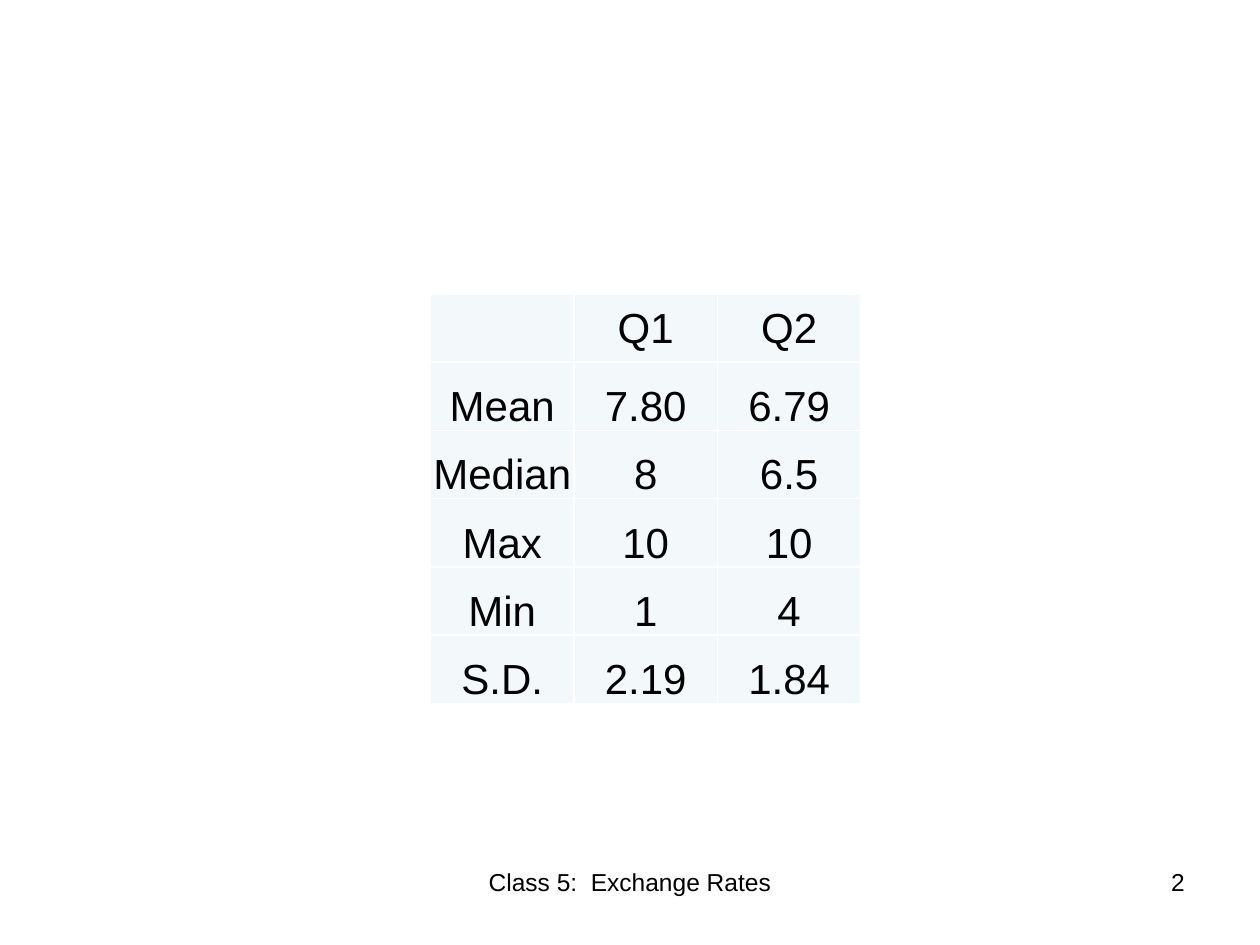
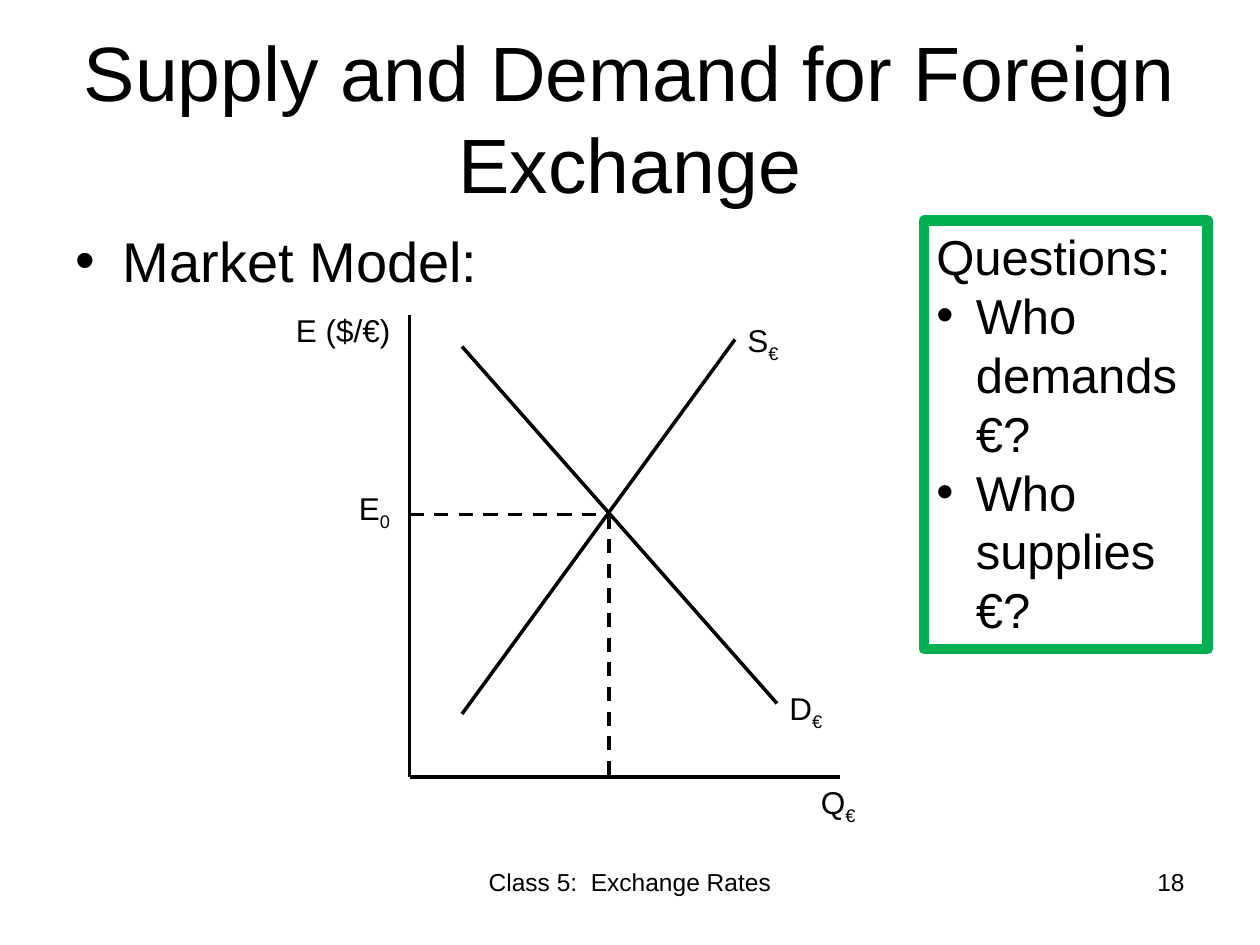
from lxml.etree import SubElement
from pptx import Presentation
from pptx.dml.color import RGBColor
from pptx.enum.dml import MSO_LINE_DASH_STYLE as Dash
from pptx.enum.shapes import MSO_CONNECTOR as Connector, MSO_SHAPE as Shape
from pptx.enum.text import MSO_ANCHOR as Anchor, MSO_AUTO_SIZE as AutoSize, PP_ALIGN as Align
from pptx.oxml.ns import qn
from pptx.util import Pt

# Shared look
BLACK = RGBColor(0x00, 0x00, 0x00)
WHITE = RGBColor(0xFF, 0xFF, 0xFF)
PALE = RGBColor(0xF3, 0xF9, 0xFA)
GREEN = RGBColor(0x00, 0xB0, 0x50)
FONT = "Arial"
FOOTER = "Class 5:  Exchange Rates"
BLANK_LAYOUT, CONTENT_LAYOUT = 6, 1

# Statistics table
STATISTICS = [
    ("", "Q1", "Q2"),
    ("Mean", "7.80", "6.79"),
    ("Median", "8", "6.5"),
    ("Max", "10", "10"),
    ("Min", "1", "4"),
    ("S.D.", "2.19", "1.84"),
]

# Market diagram, in points from its top left corner: start, end, dash
MARKET_LINES = [
    ((72, 270), (318, 270), None),
    ((72, 270), (72, 6), None),
    ((282, 228), (102, 24), None),
    ((102, 234), (258, 20), None),
    ((72, 120), (186, 120), Dash.DASH),
    ((186, 120), (186, 270), Dash.DASH),
]
# Left, top, width, text, subscript
MARKET_LABELS = [
    (0, 0, 96, "E ($/€)", ""),
    (258, 6, 54, "S", "€"),
    (282, 216, 54, "D", "€"),
    (300, 270, 54, "Q", "€"),
    (36, 102, 54, "E", "0"),
]


def set_all(target, values):
    for name, value in values.items():
        setattr(target, name, value)


def place(shape, box):
    set_all(shape, dict(zip(("left", "top", "width", "height"), map(Pt, box))))


def add_span(para, text, size, subscript=False):
    span = para.add_run()
    span.text = text
    set_all(span.font, {"name": FONT, "size": Pt(size)})
    span.font.color.rgb = BLACK
    if subscript:
        span.font._element.set("baseline", "-25000")


def add_bullet(para, indent):
    props = para._p.get_or_add_pPr()
    props.set("marL", str(Pt(indent)))
    props.set("indent", str(-Pt(indent)))
    SubElement(props, qn("a:buFont"), typeface=FONT)
    SubElement(props, qn("a:buChar"), char="•")


def add_label(page, box, text, size, align=Align.LEFT, subscript=""):
    frame = page.shapes.add_textbox(*map(Pt, box)).text_frame
    frame.word_wrap = True
    para = frame.paragraphs[0]
    para.alignment = align
    add_span(para, text, size)
    if subscript:
        add_span(para, subscript, size, subscript=True)


def add_footer(page, number):
    top, height = 492, 37.5
    add_label(page, (246, top, 228, height), FOOTER, 14, Align.CENTER)
    add_label(page, (516, top, 168, height), str(number), 14, Align.RIGHT)


def fill_placeholder(holder, box, text, size, anchor):
    """Move a title or body placeholder and return its paragraph."""
    place(holder, box)
    set_all(holder.text_frame, {"auto_size": AutoSize.NONE, "vertical_anchor": anchor,
                                "word_wrap": True})
    para = holder.text_frame.paragraphs[0]
    add_span(para, text, size)
    return para


def add_cell_borders(cell):
    props = cell._tc.get_or_add_tcPr()
    for side in ("lnL", "lnR", "lnT", "lnB"):
        line = SubElement(props, qn(f"a:{side}"), w=str(Pt(1)))
        fill = SubElement(line, qn("a:solidFill"))
        SubElement(fill, qn("a:srgbClr"), val=str(WHITE))


def add_statistics(page, box):
    table = page.shapes.add_table(len(STATISTICS), len(STATISTICS[0]), *map(Pt, box)).table
    set_all(table, {"first_row": False, "horz_banding": False})
    for row_index, values in enumerate(STATISTICS):
        for column_index, value in enumerate(values):
            cell = table.cell(row_index, column_index)
            set_all(cell, {
                "margin_left": Pt(0.75), "margin_right": Pt(0.75),
                "margin_top": Pt(0.75), "margin_bottom": 0,
                "vertical_anchor": Anchor.BOTTOM if row_index else Anchor.MIDDLE,
            })
            add_cell_borders(cell)
            cell.fill.solid()
            cell.fill.fore_color.rgb = PALE
            para = cell.text_frame.paragraphs[0]
            para.alignment = Align.CENTER
            if value:
                add_span(para, value, 24)


def add_market(page, left, top):
    for (x1, y1), (x2, y2), dash in MARKET_LINES:
        ends = map(Pt, (left + x1, top + y1, left + x2, top + y2))
        connector = page.shapes.add_connector(Connector.STRAIGHT, *ends)
        connector.line.color.rgb = BLACK
        set_all(connector.line, {"width": Pt(2), "dash_style": dash})
        SubElement(connector._element.spPr, qn("a:effectLst"))
    for x, y, width, text, subscript in MARKET_LABELS:
        add_label(page, (left + x, top + y, width, 28.8), text, 18, subscript=subscript)


def add_questions(page, box):
    panel = page.shapes.add_shape(Shape.RECTANGLE, *map(Pt, box))
    panel.shadow.inherit = False
    panel.fill.background()
    panel.line.color.rgb = GREEN
    panel.line.width = Pt(6)
    frame = panel.text_frame
    set_all(frame, {"word_wrap": True, "vertical_anchor": Anchor.TOP})
    heading = frame.paragraphs[0]
    heading.alignment = Align.LEFT
    add_span(heading, "Questions:", 28)
    for question in ("Who demands €?", "Who supplies €?"):
        para = frame.add_paragraph()
        para.alignment = Align.LEFT
        add_bullet(para, 22.5)
        add_span(para, question, 28)


def build_statistics_slide(deck):
    page = deck.slides.add_slide(deck.slide_layouts[BLANK_LAYOUT])
    add_statistics(page, (246, 168, 246, 234))
    add_footer(page, 2)


def build_market_slide(deck):
    page = deck.slides.add_slide(deck.slide_layouts[CONTENT_LAYOUT])
    title = fill_placeholder(page.shapes.title, (36, 21.6, 648, 90),
                             "Supply and Demand for Foreign Exchange", 44, Anchor.MIDDLE)
    title.alignment = Align.CENTER
    body = fill_placeholder(page.placeholders[1], (36, 126, 648, 42),
                            "Market Model:", 32, Anchor.TOP)
    add_bullet(body, 27)
    add_footer(page, 18)
    add_market(page, 162, 174)
    add_questions(page, (528, 126, 162, 245))


def main():
    deck = Presentation()
    set_all(deck, {"slide_width": Pt(720), "slide_height": Pt(540)})
    build_statistics_slide(deck)
    build_market_slide(deck)
    deck.save("out.pptx")


if __name__ == "__main__":
    main()
